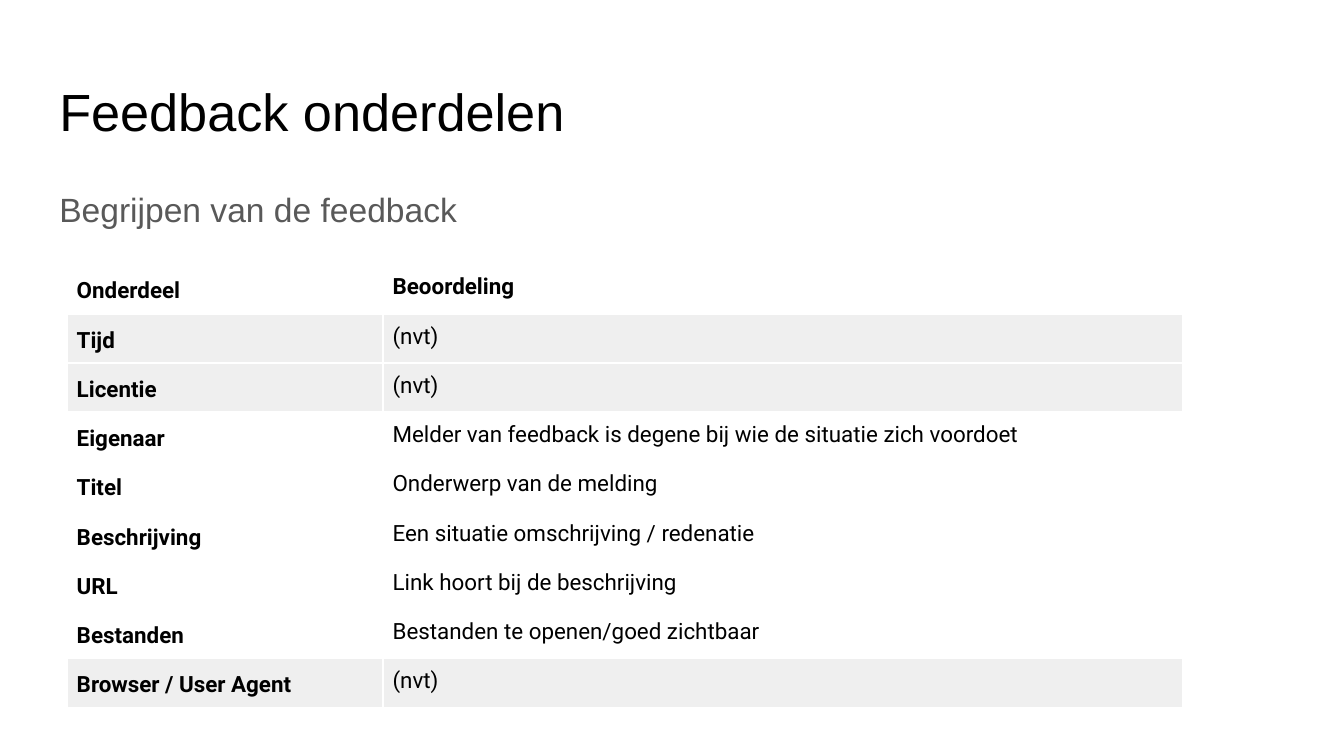
from pptx import Presentation
from pptx import util as u
from pptx.dml.color import RGBColor
from pptx.enum import text
from pptx.oxml import xmlchemy
from pptx.oxml.ns import qn
from lxml import etree


def color(value):
    return RGBColor.from_string(value)


class FeedbackSlide:
    black, grey, shade, white = "000000", "595959", "EFEFEF", "FFFFFF"
    heading_font, table_font = "Arial", "Roboto"

    def __init__(self, deck):
        self.slide = deck.slides.add_slide(deck.slide_layouts[1])

    def style(self, paragraph, font, size, ink, bold=False, spacing=1.0):
        paragraph.font.name = font
        paragraph.font.size = u.Pt(size)
        paragraph.font.color.rgb = color(ink)
        paragraph.font.bold = bold
        paragraph.line_spacing = spacing
        paragraph.space_before = u.Pt(0)
        paragraph.alignment = text.PP_ALIGN.LEFT

    def placeholder(self, index, wording, top, height, size, ink, spacing=1.0):
        holder = self.slide.placeholders[index]
        holder.left, holder.top = u.Cm(0.87), u.Cm(top)
        holder.width, holder.height = u.Cm(23.67), u.Cm(height)
        frame = holder.text_frame
        frame.text = wording
        frame.word_wrap = True
        frame.auto_size = text.MSO_AUTO_SIZE.NONE
        frame.vertical_anchor = text.MSO_ANCHOR.TOP
        frame.margin_left = frame.margin_right = u.Cm(0.25)
        frame.margin_top = frame.margin_bottom = u.Cm(0.25)
        line = frame.paragraphs[0]
        self.style(line, self.heading_font, size, ink, spacing=spacing)
        return line

    def title(self, wording):
        self.placeholder(0, wording, 1.24, 1.6, 28, self.black)

    def subtitle(self, wording):
        line = self.placeholder(1, wording, 3.2, 9.5, 18, self.grey, 1.15)
        properties = line._p.get_or_add_pPr()
        properties.set("marL", "0")
        properties.set("indent", "0")
        etree.SubElement(properties, qn("a:buNone"))
        defaults = properties.find(qn("a:defRPr"))
        if defaults is not None:
            properties.append(defaults)

    def borders(self, cell):
        properties = cell._tc.get_or_add_tcPr()
        for position, side in enumerate(("lnL", "lnR", "lnT", "lnB")):
            edge = etree.Element(qn(f"a:{side}"), w=str(u.Pt(1)))
            fill = etree.SubElement(edge, qn("a:solidFill"))
            etree.SubElement(fill, qn("a:srgbClr"), val=self.white)
            properties.insert(position, edge)

    def cell(self, cell, wording, bold, spacing, shaded):
        cell.text = wording
        cell.margin_left = cell.margin_right = u.Cm(0.18)
        cell.margin_top = cell.margin_bottom = u.Cm(0.18)
        if shaded:
            cell.fill.solid()
            cell.fill.fore_color.rgb = color(self.shade)
        else:
            cell.fill.background()
        self.borders(cell)
        self.style(cell.text_frame.paragraphs[0], self.table_font, 12,
                   self.black, bold, spacing)

    def table(self, rows, widths):
        table = self.slide.shapes.add_table(
            len(rows), len(widths), u.Cm(1.27), u.Cm(5),
            u.Cm(sum(widths)), u.Cm(0.92 * len(rows))).table
        table.horz_banding = False
        for column, width in zip(table.columns, widths):
            column.width = u.Cm(width)
        for number, (part, judgement) in enumerate(rows):
            shaded = judgement == "(nvt)"
            self.cell(table.cell(number, 0), part, True, 1.15, shaded)
            self.cell(table.cell(number, 1), judgement, number == 0, 1.0, shaded)


def main():
    deck = Presentation()
    deck.slide_width, deck.slide_height = u.Cm(25.4), u.Cm(14.29)
    feedback = FeedbackSlide(deck)
    feedback.title("Feedback onderdelen")
    feedback.subtitle("Begrijpen van de feedback")
    feedback.table([
        ("Onderdeel", "Beoordeling"),
        ("Tijd", "(nvt)"),
        ("Licentie", "(nvt)"),
        ("Eigenaar", "Melder van feedback is degene bij wie de situatie zich voordoet"),
        ("Titel", "Onderwerp van de melding"),
        ("Beschrijving", "Een situatie omschrijving / redenatie"),
        ("URL", "Link hoort bij de beschrijving"),
        ("Bestanden", "Bestanden te openen/goed zichtbaar"),
        ("Browser / User Agent", "(nvt)"),
    ], (5.97, 15.11))
    deck.save("out.pptx")


if __name__ == "__main__":
    main()
